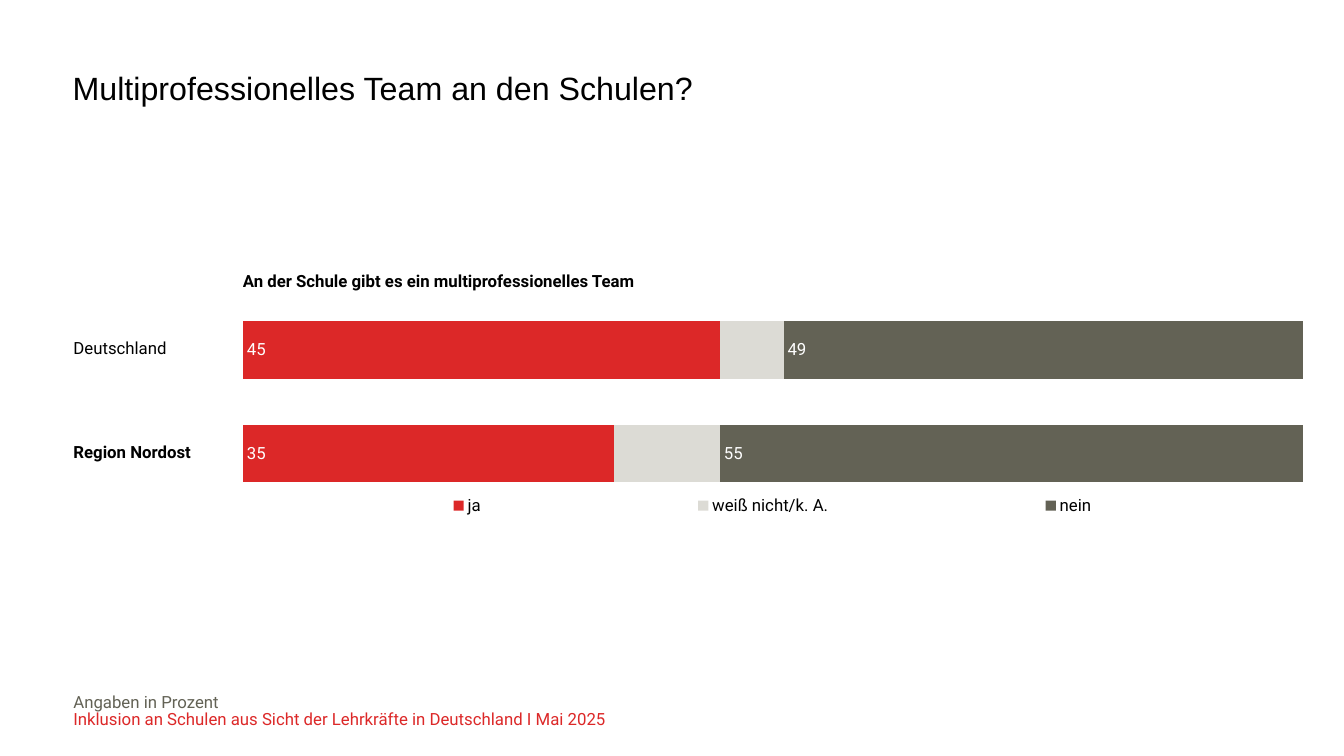
from pptx import Presentation
from pptx.chart.data import CategoryChartData
from pptx.dml.color import RGBColor
from pptx.enum.chart import XL_CHART_TYPE, XL_LABEL_POSITION, XL_LEGEND_POSITION
from pptx.enum.text import MSO_ANCHOR, MSO_AUTO_SIZE, PP_ALIGN
from pptx.oxml import parse_xml
from pptx.oxml.ns import nsdecls
from pptx.util import Cm, Pt

BLACK = RGBColor(0x00, 0x00, 0x00)
WHITE = RGBColor(0xFF, 0xFF, 0xFF)
RED = RGBColor(0xDC, 0x28, 0x28)
LIGHT_GREY = RGBColor(0xDC, 0xDB, 0xD5)
DARK_GREY = RGBColor(0x63, 0x62, 0x55)

REGIONS = ["Deutschland", "Region Nordost"]
ANSWERS = [
    ("ja", [45, 35], RED, True),
    ("weiß nicht/k. A.", [6, 10], LIGHT_GREY, False),
    ("nein", [49, 55], DARK_GREY, True),
]


def style_font(font, color, size=12, name="Roboto", bold=False):
    font.name = name
    font.size = Pt(size)
    font.bold = bold
    font.color.rgb = color


def clear_margins(box):
    box.margin_left = box.margin_top = box.margin_right = box.margin_bottom = 0


def layout_xml(left, top, width, height, inner=False):
    target = '<c:layoutTarget val="inner"/>' if inner else ""
    return parse_xml(
        f'<c:layout {nsdecls("c")}><c:manualLayout>{target}'
        '<c:xMode val="edge"/><c:yMode val="edge"/>'
        f'<c:x val="{left}"/><c:y val="{top}"/>'
        f'<c:w val="{width}"/><c:h val="{height}"/>'
        "</c:manualLayout></c:layout>"
    )


def place_chart_part(element, index, layout):
    for old_layout in element.xpath("c:layout"):
        element.remove(old_layout)
    element.insert(index, layout)


def add_title(page, left, top, width, height):
    title = page.shapes.title
    title.left, title.top, title.width, title.height = left, top, width, height
    frame = title.text_frame
    clear_margins(frame)
    frame.word_wrap = True
    frame.auto_size = MSO_AUTO_SIZE.NONE
    frame.vertical_anchor = MSO_ANCHOR.TOP
    para = frame.paragraphs[0]
    para.text = "Multiprofessionelles Team an den Schulen?"
    para.alignment = PP_ALIGN.LEFT
    para.line_spacing = 0.9
    style_font(para.font, BLACK, 23, "Arial")


def add_answer_chart(page, left, top, width, height):
    data = CategoryChartData()
    data.categories = ["1", "2"]
    for name, values, color, labelled in ANSWERS:
        data.add_series(name, values)
    chart = page.shapes.add_chart(
        XL_CHART_TYPE.BAR_STACKED, left, top, width, height, data
    ).chart
    style_font(chart.font, BLACK)
    chart.has_title = False

    chart.category_axis.reverse_order = True
    chart.category_axis.visible = False
    value_axis = chart.value_axis
    value_axis.minimum_scale = 0
    value_axis.maximum_scale = 100
    value_axis.major_unit = 20
    value_axis.has_major_gridlines = False
    value_axis.visible = False

    plot = chart.plots[0]
    plot.gap_width = 80
    plot.overlap = 100
    plot.vary_by_categories = False
    for series, (name, values, color, labelled) in zip(plot.series, ANSWERS):
        series.format.fill.solid()
        series.format.fill.fore_color.rgb = color
        if labelled:
            labels = series.data_labels
            labels.show_value = True
            labels.position = XL_LABEL_POSITION.INSIDE_BASE
            style_font(labels.font, WHITE)

    chart.has_legend = True
    legend = chart.legend
    legend.position = XL_LEGEND_POSITION.BOTTOM
    legend.include_in_layout = False
    style_font(legend.font, BLACK)
    plot_area = chart.element.xpath("c:chart/c:plotArea")[0]
    legend_area = chart.element.xpath("c:chart/c:legend")[0]
    place_chart_part(plot_area, 0, layout_xml(0.091, 0.194, 0.909, 0.456, True))
    place_chart_part(legend_area, 1, layout_xml(0.09, 0.61, 0.91, 0.08))


def add_label_table(page, left, top, width, row_height, labels, anchor, spacing):
    table = page.shapes.add_table(
        len(labels), 1, left, top, width, row_height * len(labels)
    ).table
    table.first_row = False
    table.horz_banding = False
    for row, (text, bold) in zip(table.rows, labels):
        row.height = row_height
        cell = row.cells[0]
        cell.fill.background()
        clear_margins(cell)
        cell.vertical_anchor = anchor
        para = cell.text_frame.paragraphs[0]
        para.text = text
        para.line_spacing = spacing
        style_font(para.font, BLACK, bold=bold)


def add_source_note(page, left, top, width, height):
    frame = page.shapes.add_textbox(left, top, width, height).text_frame
    clear_margins(frame)
    frame.word_wrap = True
    frame.vertical_anchor = MSO_ANCHOR.BOTTOM
    lines = [
        ("Angaben in Prozent", DARK_GREY),
        ("Inklusion an Schulen aus Sicht der Lehrkräfte in Deutschland I Mai 2025", RED),
    ]
    for index, (text, color) in enumerate(lines):
        para = frame.add_paragraph() if index else frame.paragraphs[0]
        para.text = text
        para.line_spacing = 0.85
        style_font(para.font, color)


def main():
    deck = Presentation()
    deck.slide_width, deck.slide_height = Cm(33.87), Cm(19.05)
    page = deck.slides.add_slide(deck.slide_layouts[5])
    add_answer_chart(page, Cm(3.45), Cm(5.28), Cm(29.39), Cm(11.48))
    add_title(page, Cm(1.83), Cm(1.83), Cm(31.01), Cm(2.31))
    add_source_note(page, Cm(1.85), Cm(16.87), Cm(28.17), Cm(1.5))
    heading = [("An der Schule gibt es ein multiprofessionelles Team", True)]
    add_label_table(
        page, Cm(6.12), Cm(6.78), Cm(26.77), Cm(0.56), heading, MSO_ANCHOR.BOTTOM, 0.85
    )
    regions = [(region, region == REGIONS[-1]) for region in REGIONS]
    add_label_table(
        page, Cm(1.85), Cm(7.47), Cm(3.58), Cm(2.63), regions, MSO_ANCHOR.MIDDLE, 1.0
    )
    deck.save("out.pptx")


if __name__ == "__main__":
    main()
